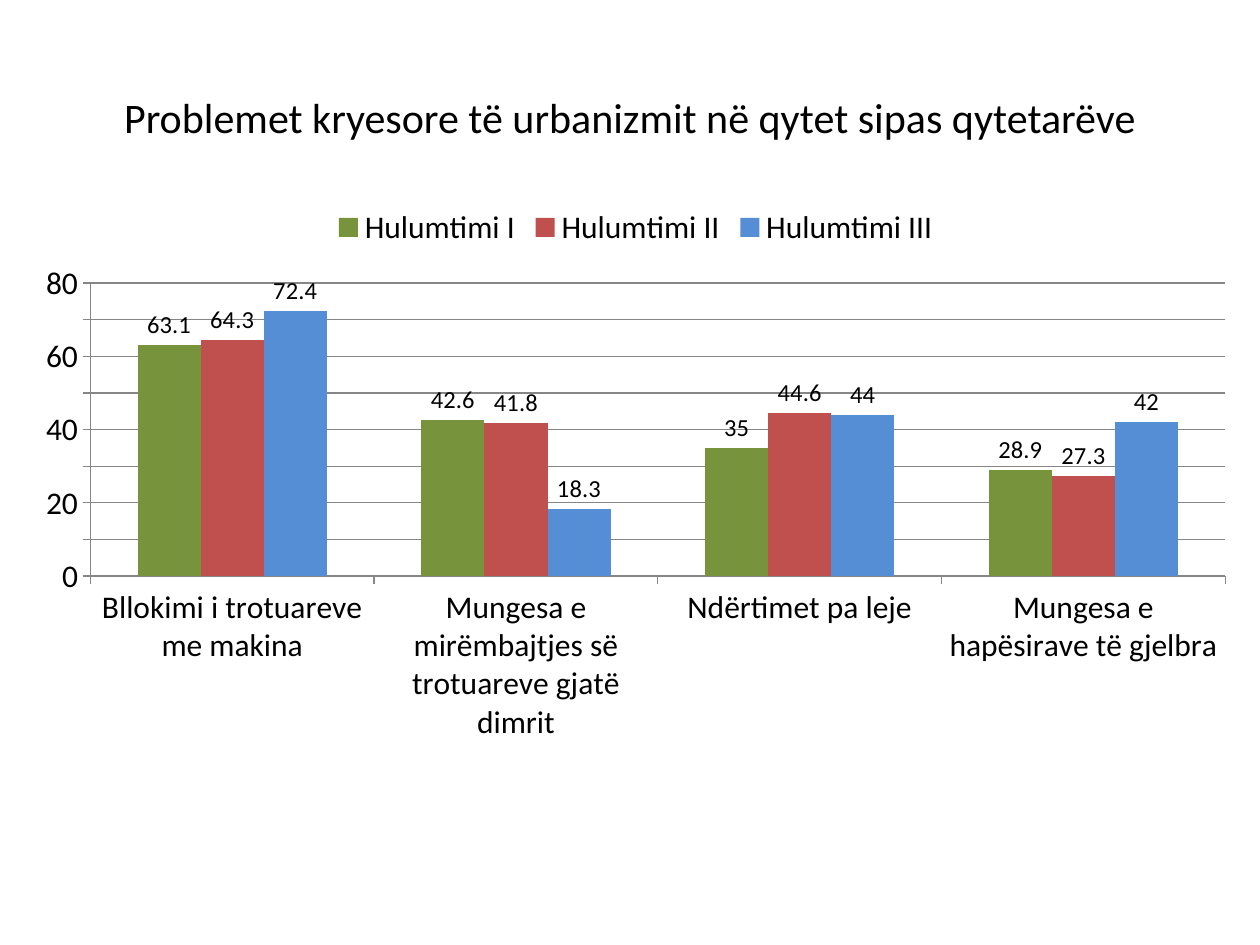
from pptx import Presentation
from pptx import util as u
from pptx.chart.data import CategoryChartData
from pptx.dml.color import RGBColor
from pptx.enum import chart as ch, text

W, H = 10, 7.5
COLORS = {"text": "000000", "grid": "868686", "Hulumtimi I": "77933C",
          "Hulumtimi II": "C0504D", "Hulumtimi III": "558ED5"}
CATEGORIES = ["Bllokimi i trotuareve me makina",
              "Mungesa e mirëmbajtjes së trotuareve gjatë dimrit",
              "Ndërtimet pa leje",
              "Mungesa e hapësirave të gjelbra"]
SURVEYS = {"Hulumtimi I": (63.1, 42.6, 35, 28.9),
           "Hulumtimi II": (64.3, 41.8, 44.6, 27.3),
           "Hulumtimi III": (72.4, 18.3, 44, 42)}
TITLE_BOX = (0.05, 0.04, 0.9, 1 / 6)
CHART_BOX = (0.017, 0.204, 0.975, 0.592)


def color(name):
    return RGBColor.from_string(COLORS[name])


def place(box):
    return [u.Inches(share * side) for share, side in zip(box, (W, H, W, H))]


def set_all(obj, **values):
    for name, value in values.items():
        setattr(obj, name, value)


def set_font(font, size):
    set_all(font, name="Calibri", size=u.Pt(size), bold=False)
    font.color.rgb = color("text")


def set_line(fmt):
    fmt.line.color.rgb = color("grid")
    fmt.line.width = u.Pt(0.75)


def add_title(s, box, words):
    sp = s.shapes.title
    set_all(sp, **dict(zip(("left", "top", "width", "height"), place(box))))
    tf = sp.text_frame
    set_all(tf, text=words, word_wrap=True, vertical_anchor=text.MSO_ANCHOR.MIDDLE)
    p = tf.paragraphs[0]
    p.alignment = text.PP_ALIGN.CENTER
    set_font(p.runs[0].font, 24)


def add_survey_chart(s, box):
    data = CategoryChartData()
    data.categories = CATEGORIES
    for name, values in SURVEYS.items():
        data.add_series(name, values)
    chart = s.shapes.add_chart(ch.XL_CHART_TYPE.COLUMN_CLUSTERED, *place(box), data).chart
    set_all(chart, has_title=False, has_legend=True)
    set_font(chart.font, 18)
    set_all(chart.legend, position=ch.XL_LEGEND_POSITION.TOP, include_in_layout=False)

    for axis in (chart.category_axis, chart.value_axis):
        set_all(axis, major_tick_mark=ch.XL_TICK_MARK.OUTSIDE,
                minor_tick_mark=ch.XL_TICK_MARK.NONE)
        set_line(axis.format)
    set_all(chart.value_axis, minimum_scale=0, maximum_scale=80, major_unit=10,
            has_major_gridlines=True)
    set_line(chart.value_axis.major_gridlines.format)

    plot = chart.plots[0]
    set_all(plot, gap_width=150, overlap=0, vary_by_categories=False)
    for series in plot.series:
        series.invert_if_negative = False
        series.format.fill.solid()
        series.format.fill.fore_color.rgb = color(series.name)
        labels = series.data_labels
        set_all(labels, show_value=True, position=ch.XL_LABEL_POSITION.OUTSIDE_END)
        set_font(labels.font, 14)


def main():
    prs = Presentation()
    set_all(prs, slide_width=u.Inches(W), slide_height=u.Inches(H))
    s = prs.slides.add_slide(prs.slide_layouts[5])
    add_title(s, TITLE_BOX, "Problemet kryesore të urbanizmit në qytet sipas qytetarëve")
    add_survey_chart(s, CHART_BOX)
    prs.save("out.pptx")


if __name__ == "__main__":
    main()
